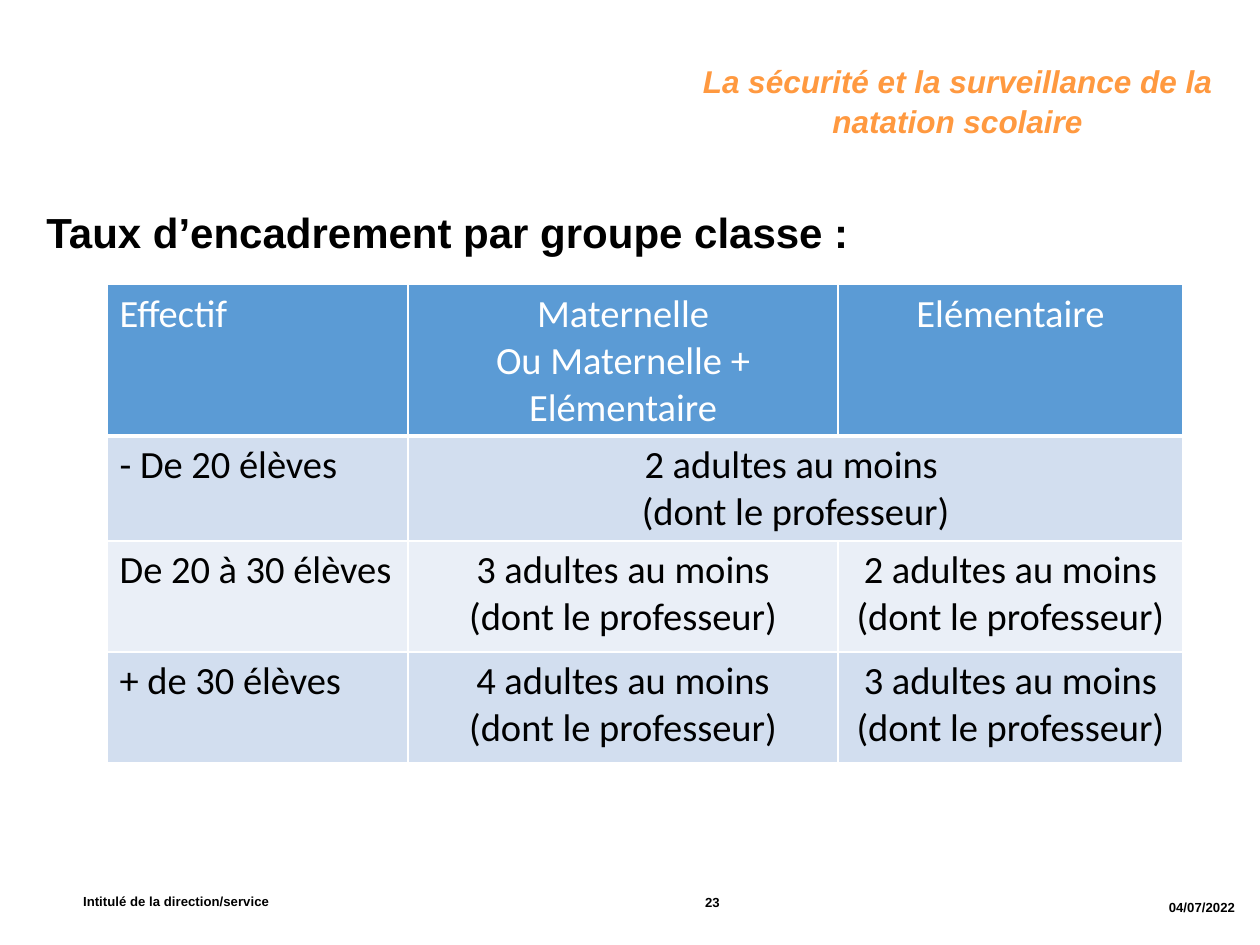
from lxml import etree
from pptx import Presentation
from pptx.dml.color import RGBColor
from pptx.enum import text
from pptx.oxml.ns import qn
from pptx.util import Inches, Pt

LEFT, CENTER, RIGHT = text.PP_ALIGN.LEFT, text.PP_ALIGN.CENTER, text.PP_ALIGN.RIGHT
HEADER_FILL, DARK_BAND, LIGHT_BAND = "5B9BD5", "D2DEEF", "EAEFF7"
WHITE, BLACK, ORANGE = "FFFFFF", "000000", "FF9940"
PROFESSOR = "\n(dont le professeur)"
COLUMN_WIDTHS = (2.39, 3.41, 2.74)
ROW_HEIGHTS = (1.19, 0.83, 0.88, 0.88)
ROWS = (
    ("Effectif", "Maternelle\nOu Maternelle + Elémentaire", "Elémentaire"),
    ("- De 20 élèves", "2 adultes au moins " + PROFESSOR, ""),
    ("De 20 à 30 élèves", "3 adultes au moins" + PROFESSOR, "2 adultes au moins" + PROFESSOR),
    ("+ de 30 élèves", "4 adultes au moins" + PROFESSOR, "3 adultes au moins" + PROFESSOR),
)


def rgb(value):
    return RGBColor.from_string(value)


def format_text(frame, size, name="Arial", color=BLACK, bold=True, align=LEFT):
    for paragraph in frame.paragraphs:
        paragraph.alignment = align
        font = paragraph.font
        font.size, font.name, font.bold = Pt(size), name, bold
        font.color.rgb = rgb(color)


def add_text(slide, words, left, top, width, height, size,
             align=LEFT, anchor=text.MSO_ANCHOR.MIDDLE):
    box = slide.shapes.add_textbox(Inches(left), Inches(top), Inches(width), Inches(height))
    frame = box.text_frame
    frame.word_wrap = True
    frame.vertical_anchor = anchor
    frame.text = words
    format_text(frame, size, align=align)
    return frame


def set_title(slide, words):
    title = slide.shapes.title
    title.left, title.top = Inches(5), Inches(0.43)
    title.width, title.height = Inches(5), Inches(0.71)
    frame = title.text_frame
    frame.text = words
    frame.word_wrap = True
    frame.auto_size = text.MSO_AUTO_SIZE.NONE
    frame.vertical_anchor = text.MSO_ANCHOR.TOP
    format_text(frame, 18, color=ORANGE, align=CENTER)
    paragraph = frame.paragraphs[0]
    paragraph.font.italic = True
    paragraph.line_spacing = 1.05
    paragraph.space_before, paragraph.space_after = Pt(6), Pt(8)
    properties = paragraph._p.get_or_add_pPr()
    properties.set("marL", str(Inches(0.2)))
    properties.set("indent", "0")


def set_borders(cell, bottom_width):
    """Draw white lines on the four sides, ahead of the fill in the XML."""
    properties = cell._tc.get_or_add_tcPr()
    widths = {"a:lnL": 1, "a:lnR": 1, "a:lnT": 1, "a:lnB": bottom_width}
    for index, (tag, width) in enumerate(widths.items()):
        line = etree.Element(qn(tag), w=str(Pt(width)))
        fill = etree.SubElement(line, qn("a:solidFill"))
        etree.SubElement(fill, qn("a:srgbClr"), val=WHITE)
        properties.insert(index, line)


def add_staff_table(slide):
    table = slide.shapes.add_table(
        len(ROWS), len(COLUMN_WIDTHS), Inches(0.85), Inches(2.26),
        Inches(sum(COLUMN_WIDTHS)), Inches(sum(ROW_HEIGHTS))).table
    for column, width in zip(table.columns, COLUMN_WIDTHS):
        column.width = Inches(width)
    for row, height in zip(table.rows, ROW_HEIGHTS):
        row.height = Inches(height)

    # The smallest classes have one rule for both levels
    table.cell(1, 1).merge(table.cell(1, 2))

    fills = (HEADER_FILL, DARK_BAND, LIGHT_BAND, DARK_BAND)
    for row_index, (row, fill) in enumerate(zip(ROWS, fills)):
        is_header = row_index == 0
        for column_index, words in enumerate(row):
            cell = table.cell(row_index, column_index)
            cell.fill.solid()
            cell.fill.fore_color.rgb = rgb(fill)
            set_borders(cell, 3 if is_header else 1)
            if cell.is_spanned:
                continue
            cell.text = words
            format_text(cell.text_frame, 22, "Calibri", WHITE if is_header else BLACK,
                        bold=False, align=CENTER if column_index else LEFT)


def main():
    presentation = Presentation()
    presentation.slide_width, presentation.slide_height = Inches(10), Inches(7.5)
    slide = presentation.slides.add_slide(presentation.slide_layouts[5])

    # Footer
    add_text(slide, "23", 4.53, 6.96, 2.25, 0.4, 7.5, CENTER)
    add_text(slide, "04/07/2022", 7.65, 7, 2.25, 0.4, 7.5, RIGHT)
    service = add_text(slide, "Intitulé de la direction/service", 0.66, 6.96, 6.46, 0.39, 7.5)
    service.margin_left = service.margin_right = 0
    service.margin_top = service.margin_bottom = 0

    # Headings
    add_text(slide, "Taux d’encadrement par groupe classe :", 0.27, 1.59, 9.45, 0.5, 24,
             anchor=text.MSO_ANCHOR.TOP)
    set_title(slide, "La sécurité et la surveillance de la natation scolaire")

    add_staff_table(slide)
    presentation.save("out.pptx")


if __name__ == "__main__":
    main()
